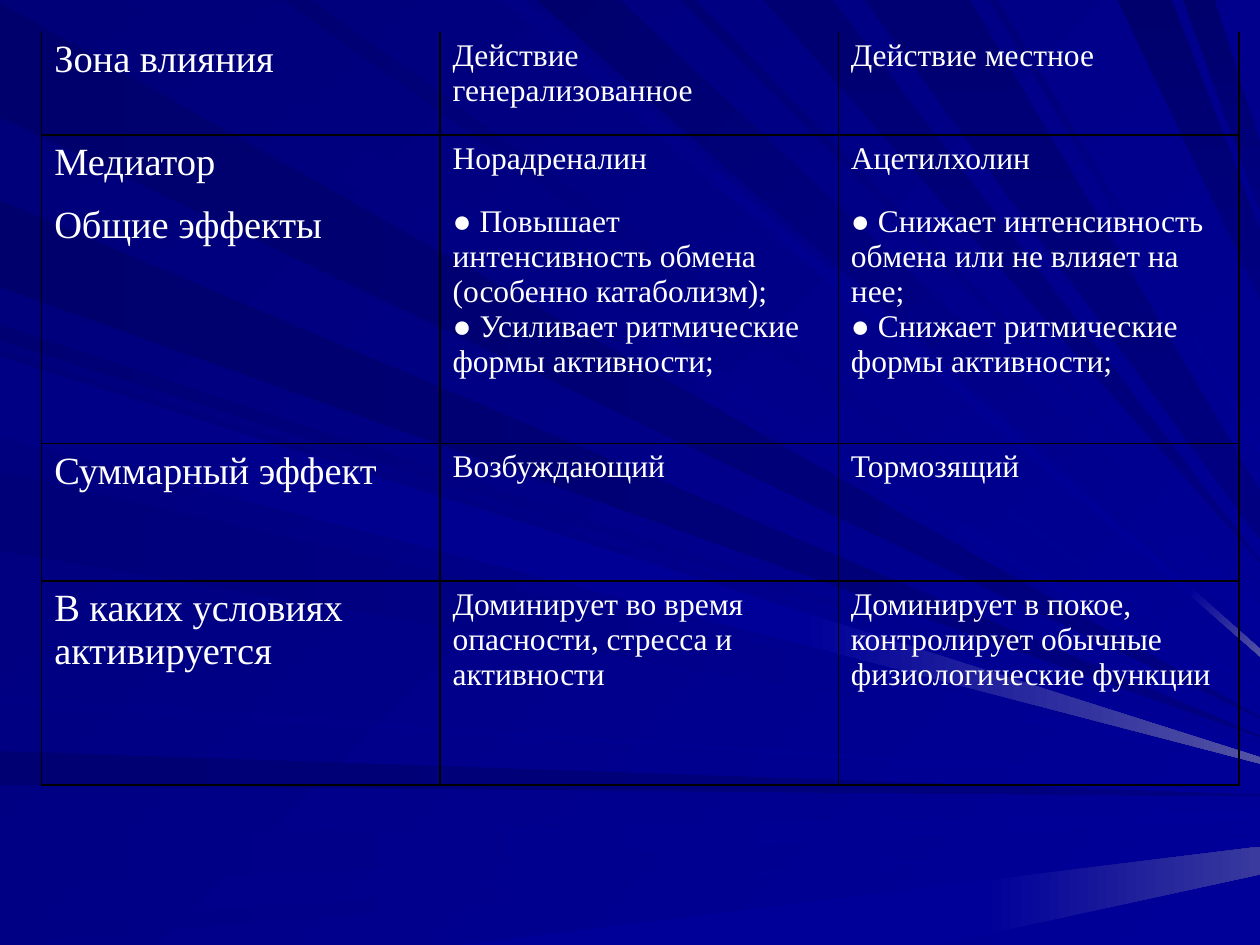
from lxml import etree
from pptx import Presentation
from pptx import util as u
from pptx.dml.color import RGBColor
from pptx.oxml import ns

WHITE = RGBColor.from_string("FFFFFF")
BLACK = RGBColor.from_string("000000")
DARK = RGBColor.from_string("00006C")
DEEP = RGBColor.from_string("000073")
MIDNIGHT = RGBColor.from_string("000078")
SOFT = RGBColor.from_string("000085")
NAVY = RGBColor.from_string("000080")
BLUE = RGBColor.from_string("000099")
GLOW = RGBColor.from_string("5252A4")
FAINT_GLOW = RGBColor.from_string("39399E")

RAY_UNIT = u.Cm(0.0254)  # the slide is 1000 x 750 of these
RIGHT, BOTTOM = 1000, 750

# Rays, back to front: edge they start from, two places on that edge,
# two heights on the right edge, start colour, end colour
RAYS = [
    ("left", 2, 93, 569, 570, DARK, NAVY),
    ("top", 26, 101, 563, 562, MIDNIGHT, BLUE),
    ("left", 596, 623, 631, 632, DEEP, NAVY),
    ("left", 665, 704, 643, 651, SOFT, BLUE),
    ("left", 735, 750, 662, 662, SOFT, BLUE),
    ("bottom", 364, 742, 672, 694, BLUE, BLUE),
    ("left", 258, 270, 589, 589, DEEP, BLUE),
    ("left", 159, 228, 584, 585, DARK, NAVY),
    ("top", 398, 416, 521, 515, SOFT, BLUE),
    ("top", 426, 492, 507, 479, DARK, BLUE),
    ("top", 540, 552, 463, 463, DEEP, BLUE),
    ("top", 606, 661, 446, 445, DEEP, NAVY),
    ("top", 887, 930, 237, 183, DARK, NAVY),
    ("top", 939, 964, 167, 114, DARK, NAVY),
    ("left", 278, 342, 596, 602, MIDNIGHT, BLUE),
    ("left", 374, 437, 605, 606, MIDNIGHT, BLUE),
    ("left", 552, 560, 621, 623, SOFT, BLUE),
    ("top", 225, 247, 552, 547, DEEP, BLUE),
    ("top", 686, 770, 428, 390, DEEP, NAVY),
    ("top", 785, 792, 360, 354, MIDNIGHT, BLUE),
    ("left", 283, 347, 601, 606, SOFT, BLUE),
]
# Rays that light up towards the right: where the glow begins, and its colour
GLOWS = {
    ("bottom", 364): (780, FAINT_GLOW),
    ("top", 398): (945, GLOW),
    ("left", 283): (635, GLOW),
}

# Table: a cell is a list of paragraphs
BULLET = "●"
COLUMNS = [8.03, 8.03, 8.08]
ROW_HEIGHTS = [2.08, 1.27, 4.95, 2.77, 4.11]
OPEN_EDGES = {0, 2}  # horizontal edges without a line, counted from the top
ROWS = [
    [["Зона влияния"], ["Действие генерализованное"], ["Действие местное"]],
    [["Медиатор"], ["Норадреналин"], ["Ацетилхолин"]],
    [["Общие эффекты"],
     ["● Повышает интенсивность обмена (особенно катаболизм);",
      "● Усиливает ритмические формы активности;"],
     ["● Снижает интенсивность обмена или не влияет на нее;",
      "● Снижает ритмические формы активности;"]],
    [["Суммарный эффект"], ["Возбуждающий"], ["Тормозящий"]],
    [["В каких условиях активируется"],
     ["Доминирует во время опасности, стресса и активности"],
     ["Доминирует в покое, контролирует обычные физиологические функции"]],
]


def edge_point(edge, place):
    return {"left": (0, place), "top": (place, 0), "bottom": (place, BOTTOM)}[edge]


def point_at(x, near, far):
    share = (x - near[0]) / (far[0] - near[0])
    return x, round(near[1] + share * (far[1] - near[1]))


class SlideBuilder:
    font = "Times New Roman"
    bullet_font = "Arial"
    label_size = u.Pt(22)
    text_size = u.Pt(18)

    def __init__(self, slide):
        self.slide = slide

    def paint(self, fill, start, end, angle):
        if start == end:
            fill.solid()
            fill.fore_color.rgb = start
            return
        fill.gradient()
        fill.gradient_angle = (360 - angle) % 360
        for stop, color in zip(fill.gradient_stops, (start, end)):
            stop.color.rgb = color

    def background(self, start, end, angle):
        self.paint(self.slide.background.fill, start, end, angle)

    def band(self, points, start, end, angle):
        builder = self.slide.shapes.build_freeform(*points[0], scale=RAY_UNIT)
        builder.add_line_segments(points[1:], close=True)
        shape = builder.convert_to_shape()
        shape.shadow.inherit = False
        shape.line.fill.background()
        self.paint(shape.fill, start, end, angle)

    def ray(self, edge, first, second, far_first, far_second, start, end):
        near = [edge_point(edge, first), edge_point(edge, second)]
        far = [(RIGHT, far_first), (RIGHT, far_second)]
        angle = 0 if edge != "top" else 90 if end == NAVY else 45
        if (edge, first) in GLOWS:
            x, glow = GLOWS[edge, first]
            middle = [point_at(x, *side) for side in zip(near, far)]
            self.band(middle + far[::-1], end, glow, angle)
            far = middle
        self.band(near + far[::-1], start, end, angle)

    def run(self, para, words, size, font):
        span = para.add_run()
        span.text = words
        span.font.name = font
        span.font.size = size
        span.font.color.rgb = WHITE

    def text(self, frame, lines, size):
        for index, line in enumerate(lines):
            para = frame.add_paragraph() if index else frame.paragraphs[0]
            if line.startswith(BULLET):
                self.run(para, BULLET, size, self.bullet_font)
                line = line.removeprefix(BULLET)
            self.run(para, line, size, self.font)

    def borders(self, cell, row):
        properties = cell._tc.get_or_add_tcPr()
        visible = {"lnL": True, "lnR": True,
                   "lnT": row not in OPEN_EDGES, "lnB": row + 1 not in OPEN_EDGES}
        for side, shown in visible.items():
            line = etree.SubElement(properties, ns.qn(f"a:{side}"), w=str(u.Pt(1)))
            fill = etree.SubElement(line, ns.qn("a:solidFill" if shown else "a:noFill"))
            if shown:
                etree.SubElement(fill, ns.qn("a:srgbClr"), val=str(BLACK))

    def table(self, left, top, columns, heights, rows):
        table = self.slide.shapes.add_table(
            len(rows), len(columns), u.Cm(left), u.Cm(top),
            u.Cm(sum(columns)), u.Cm(sum(heights))).table
        table.first_row = table.horz_banding = False
        for column, width in zip(table.columns, columns):
            column.width = u.Cm(width)
        for row, (height, cells) in enumerate(zip(heights, rows)):
            table.rows[row].height = u.Cm(height)
            for column, lines in enumerate(cells):
                cell = table.cell(row, column)
                self.borders(cell, row)
                cell.fill.background()
                size = self.text_size if column else self.label_size
                self.text(cell.text_frame, lines, size)


def main():
    deck = Presentation()
    deck.slide_width, deck.slide_height = u.Cm(25.4), u.Cm(19.05)
    page = SlideBuilder(deck.slides.add_slide(deck.slide_layouts[6]))

    # Backdrop
    page.background(MIDNIGHT, BLUE, 45)
    for ray in RAYS:
        page.ray(*ray)

    # Comparison table
    page.table(0.84, 0.64, COLUMNS, ROW_HEIGHTS, ROWS)
    deck.save("out.pptx")


if __name__ == "__main__":
    main()
